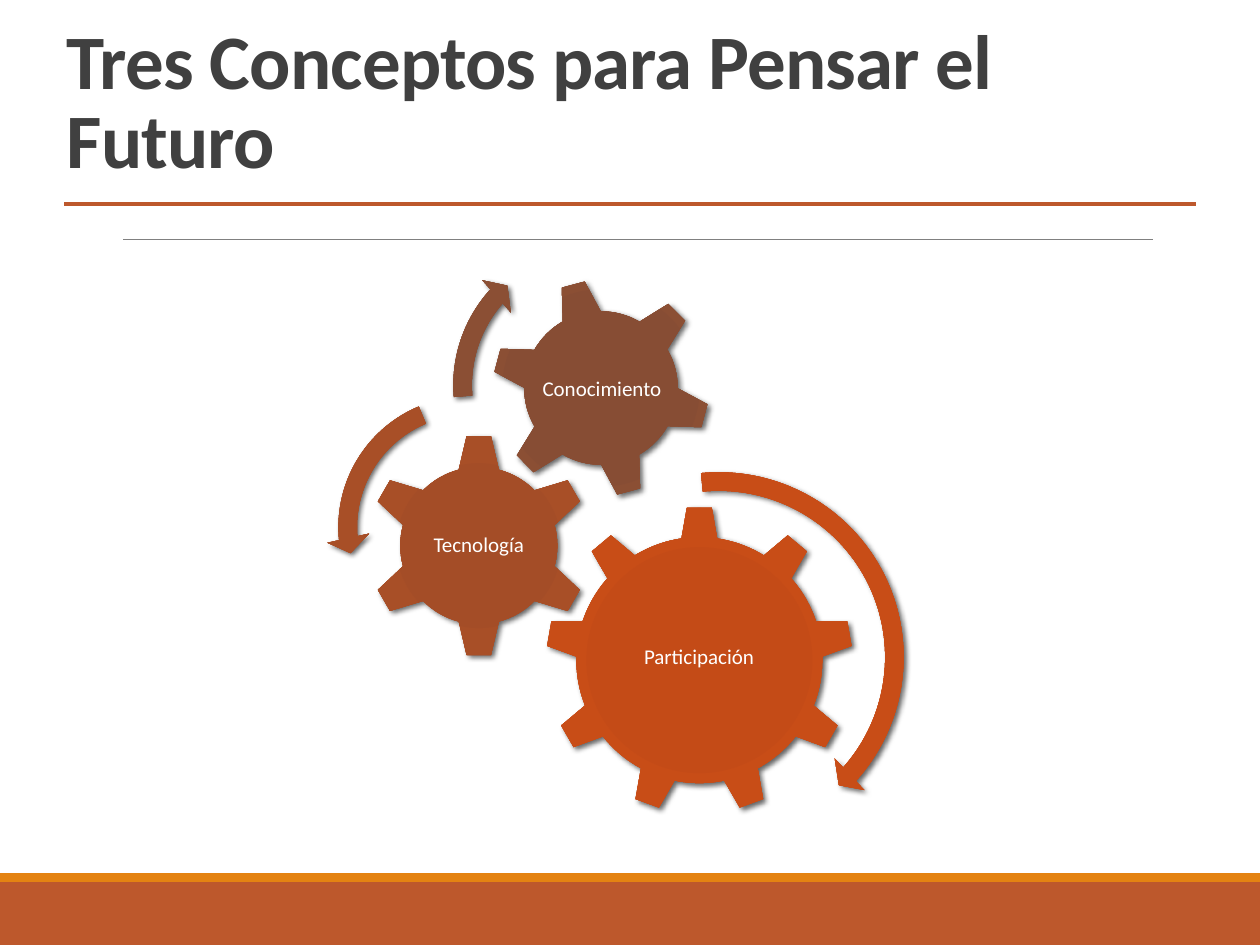
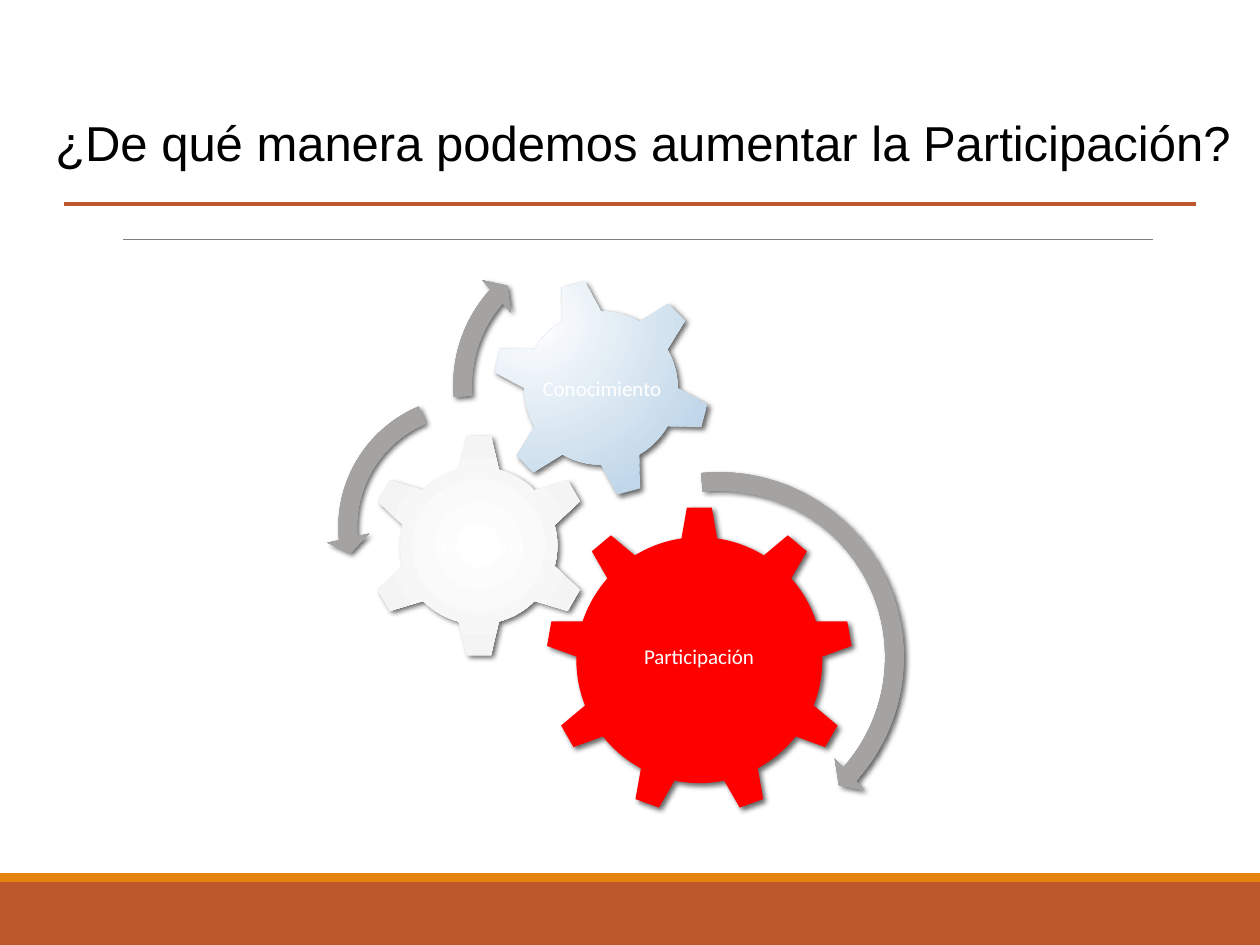
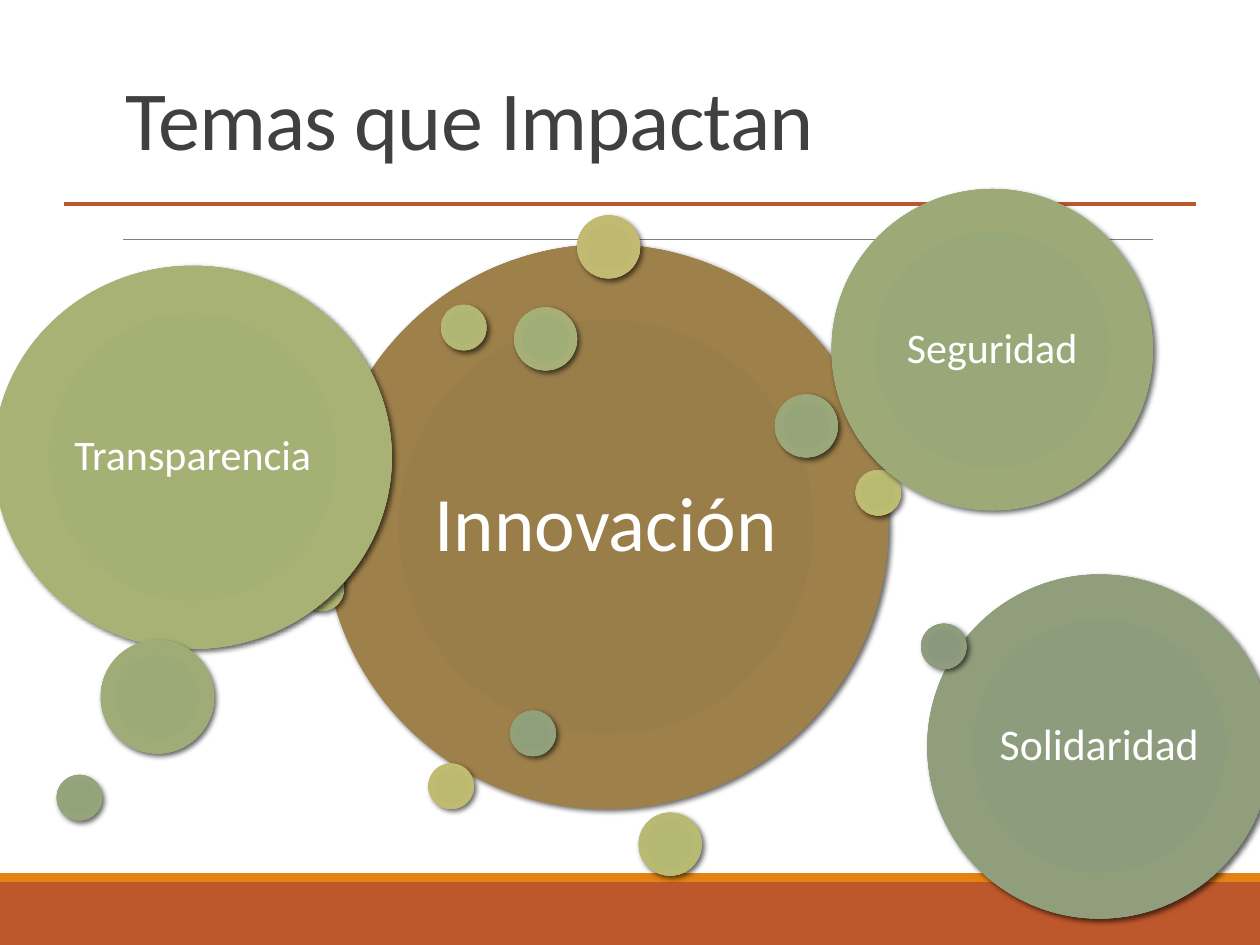
from dataclasses import dataclass
from math import sqrt

from lxml.etree import SubElement
from pptx import Presentation
from pptx.dml.color import RGBColor
from pptx.enum.shapes import MSO_CONNECTOR, MSO_SHAPE
from pptx.enum.text import MSO_ANCHOR, PP_ALIGN
from pptx.oxml.ns import qn
from pptx.util import Pt


@dataclass(frozen=True)
class Theme:
    band: str = "BD582C"
    accent: str = "E48312"
    hairline: str = "808080"
    heading: str = "404040"
    question: str = "000000"
    label: str = "FFFFFF"
    highlight: str = "FF0000"
    muted: str = "A0A0A0"
    shadow: str = "000000"
    font: str = "Calibri"
    question_font: str = "Arial"
    title_size: int = 48
    long_title_size: int = 44
    question_size: int = 28
    gear_label_size: int = 12


THEME = Theme()


def tinted(base):
    """Radial stops that lighten gently from the base colour to the rim."""
    channels = RGBColor.from_string(base)
    shifts = {0: (0, 0, 0), 34: (0, 1, 2), 70: (4, 3, 2), 100: (5, 8, 12)}
    return [(position, "".join(f"{c + s:02X}" for c, s in zip(channels, shift)))
            for position, shift in shifts.items()]


class Deck:
    def __init__(self, theme):
        self.theme = theme
        self.presentation = Presentation()
        self.presentation.slide_width = Pt(720)
        self.presentation.slide_height = Pt(540)
        self.slide = None

    def new_slide(self):
        """Start a slide with the shared footer bands and header rules."""
        self.slide = self.presentation.slides.add_slide(self.presentation.slide_layouts[6])
        self.shape(MSO_SHAPE.RECTANGLE, (0, 504, 720, 36), self.theme.band, shadow=False)
        self.shape(MSO_SHAPE.RECTANGLE, (0, 499, 720, 5), self.theme.accent, shadow=False)
        self.rule(70.5, 658.8, 136.8, self.theme.hairline, 0.5)
        self.rule(36.7, 683.3, 116.6, self.theme.band, 2.25)

    def rule(self, left, right, y, color, width):
        line = self.slide.shapes.add_connector(
            MSO_CONNECTOR.STRAIGHT, Pt(left), Pt(y), Pt(right), Pt(y))
        line.line.color.rgb = RGBColor.from_string(color)
        line.line.width = Pt(width)
        SubElement(line.element.spPr, qn("a:effectLst"))

    def shape(self, kind, box, fill, focus=100, rotation=0, adjustments=(), shadow=True):
        """Draw a preset; fill is one colour or a list of radial stops."""
        figure = self.slide.shapes.add_shape(kind, *map(Pt, box))
        figure.rotation = rotation
        for index, value in enumerate(adjustments):
            figure.adjustments[index] = value
        figure.line.fill.background()
        figure.shadow.inherit = False
        if isinstance(fill, str):
            figure.fill.solid()
            figure.fill.fore_color.rgb = RGBColor.from_string(fill)
        else:
            self.radial_fill(figure, fill, focus)
        if shadow:
            self.cast_shadow(figure)

    def radial_fill(self, figure, stops, focus):
        figure.fill.gradient()
        gradient = figure.element.spPr.find(qn("a:gradFill"))
        for child in list(gradient):
            gradient.remove(child)
        stop_list = SubElement(gradient, qn("a:gsLst"))
        for position, color in stops:
            stop = SubElement(stop_list, qn("a:gs"), pos=str(position * 1000))
            SubElement(stop, qn("a:srgbClr"), val=color)
        circle = SubElement(gradient, qn("a:path"), path="circle")
        near = str(focus * 1000)
        SubElement(circle, qn("a:fillToRect"), l=near, t=near, r="100000", b="100000")

    def cast_shadow(self, figure):
        effects = figure.element.spPr.find(qn("a:effectLst"))
        outer = SubElement(effects, qn("a:outerShdw"), blurRad=str(Pt(3)), dist=str(Pt(2)),
                           dir=str(45 * 60000), algn="ctr", rotWithShape="0")
        color = SubElement(outer, qn("a:srgbClr"), val=self.theme.shadow)
        SubElement(color, qn("a:alpha"), val="60000")

    def text(self, words, box, size, color, font=None, bold=False, align=PP_ALIGN.LEFT,
             anchor=MSO_ANCHOR.TOP, spacing=1.0, tracking=0, inset=None, wrap=True):
        frame = self.slide.shapes.add_textbox(*map(Pt, box)).text_frame
        frame.word_wrap = wrap
        frame.vertical_anchor = anchor
        if inset is not None:
            frame.margin_left = frame.margin_right = Pt(inset)
            frame.margin_top = frame.margin_bottom = Pt(inset)
        frame.text = words
        paragraph = frame.paragraphs[0]
        paragraph.alignment = align
        paragraph.line_spacing = spacing
        run = paragraph.runs[0]
        run.font.name = font or self.theme.font
        run.font.size = Pt(size)
        run.font.bold = bold
        run.font.color.rgb = RGBColor.from_string(color)
        if tracking:
            run.font._element.set("spc", str(round(tracking * 100)))

    def title(self, words, box, size, bold=False):
        self.text(words, box, size, self.theme.heading, bold=bold,
                  anchor=MSO_ANCHOR.BOTTOM, spacing=0.85, tracking=-0.5)

    def label(self, words, box, size, inset):
        self.text(words, box, size, self.theme.label, align=PP_ALIGN.CENTER,
                  anchor=MSO_ANCHOR.MIDDLE, spacing=0.9, inset=inset)

    def gears(self, gear_fills, arrow_fills, knowledge_focus=100):
        """Three meshed gears with labels, then their turning arrows."""
        focuses = (100, 100, knowledge_focus)
        for gear, fill, focus in zip(GEARS, gear_fills, focuses):
            kind, left, top, side, rotation, words, label_box = gear
            self.shape(kind, (left, top, side, side), fill, focus, rotation)
            self.label(words, label_box, self.theme.gear_label_size, 1.2)
        for (kind, left, top, side, adjustments), fill in zip(TURNS, arrow_fills):
            self.shape(kind, (left, top, side, side), fill, adjustments=adjustments)

    def bubble(self, left, top, width, height, color, words=None, size=0):
        self.shape(MSO_SHAPE.OVAL, (left, top, width, height), tinted(color))
        if words:
            # The label fills the rectangle inscribed in the ellipse.
            inner_width, inner_height = width / sqrt(2), height / sqrt(2)
            box = (left + (width - inner_width) / 2, top + (height - inner_height) / 2,
                   inner_width, inner_height)
            self.label(words, box, size, 0.3 * size)


# Gears: kind, left, top, side, rotation, label, label box
GEARS = [
    (MSO_SHAPE.GEAR_9, 311.8, 289.4, 175.7, 0, "Participación", (347, 330.5, 105, 90.7)),
    (MSO_SHAPE.GEAR_6, 209.5, 247.7, 128.2, 0, "Tecnología", (241.9, 280.1, 63.4, 63.4)),
    (MSO_SHAPE.GEAR_6, 280.8, 159.1, 125.3, 345, "Conocimiento", (308, 187.2, 72, 70.6)),
]

# Turning arrows: kind, left, top, side, adjustments
TURNS = [
    (MSO_SHAPE.CIRCULAR_ARROW, 298.1, 262.8, 225.4, (0.047, 2.99, 25.131, 158.679, 0.055)),
    (MSO_SHAPE.LEFT_CIRCULAR_ARROW, 186.5, 219.6, 163.4,
     (0.065, 4.3, 104.891, 148.378, 0.075)),
    (MSO_SHAPE.CIRCULAR_ARROW, 252, 131.8, 176.4, (0.06, 3.941, 133.138, 105.082, 0.07)),
]

CONCEPT_COLORS = ["C44A15", "A44C25", "874C32"]
PALE = [(0, "FFFFFF"), (70, "F4F4F4"), (90, "F0F0F0"), (100, "FFFFFF")]
ICE = [(0, "FFFFFF"), (100, "C1D7E9")]

# Bubbles, back to front: left, top, width, height, colour, label, label size
SMALL, MEDIUM = (26, 26), (36, 36)
BUBBLES = [
    (185, 139.7, 322.6, 322.6, "9A7D48", "Innovación", 44),
    (329.8, 123.1, *MEDIUM, "BEB76E"),
    (244.8, 436.3, *SMALL, "BCB86F"),
    (488.9, 268.6, *SMALL, "B9B96F"),
    (365, 464.4, *MEDIUM, "B4B770"),
    (252, 174.2, *SMALL, "AFB471"),
    (170.6, 323.3, *SMALL, "AAB172"),
    (-3.6, 151.9, 227.5, 218.9, "A5AF73", "Transparencia", 24),
    (293.8, 175.7, *MEDIUM, "A1AC74"),
    (57.6, 365.8, 64.8, 64.8, "9CA975"),
    (475.2, 108, 183.6, 183.6, "99A776", "Seguridad", 24),
    (442.8, 225.4, *MEDIUM, "95A477"),
    (32.4, 442.8, *SMALL, "92A178"),
    (291.6, 406.1, *SMALL, "8F9E79"),
    (529.9, 328.3, 196.6, 196.6, "8C9B7A", "Solidaridad", 25),
    (526.3, 356.4, *SMALL, "8A987B"),
]


def main():
    deck = Deck(THEME)

    # Slide 1: the three concepts
    deck.new_slide()
    concept_fills = [tinted(color) for color in CONCEPT_COLORS]
    deck.gears(concept_fills, concept_fills)
    deck.title("Tres Conceptos para Pensar el Futuro", (31, 43.2, 663.1, 65.5),
               THEME.long_title_size, bold=True)

    # Slide 2: focus on participation
    deck.new_slide()
    deck.gears([THEME.highlight, PALE, ICE], [tinted(THEME.muted)] * 3, knowledge_focus=50)
    deck.text("¿De qué manera podemos aumentar la Participación?", (24.5, 60.5, 694.8, 41),
              THEME.question_size, THEME.question, font=THEME.question_font, wrap=False)

    # Slide 3: topics with impact
    deck.new_slide()
    deck.title("Temas que Impactan", (64.8, 22.3, 594, 77), THEME.title_size)
    for bubble in BUBBLES:
        deck.bubble(*bubble)

    deck.presentation.save("out.pptx")


if __name__ == "__main__":
    main()
